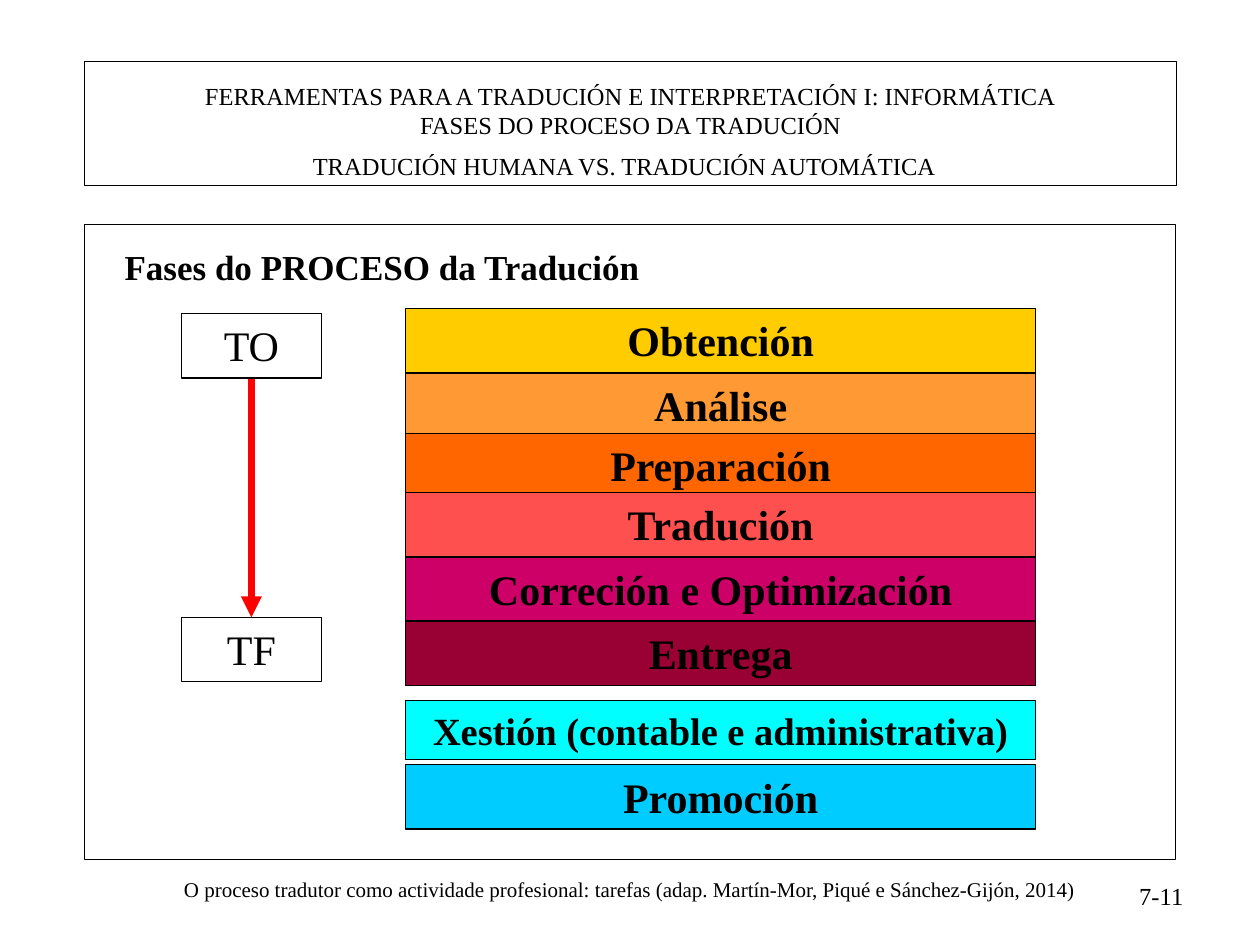
from dataclasses import dataclass

from lxml import etree
from pptx import Presentation
from pptx.dml.color import RGBColor
from pptx.enum.shapes import MSO_CONNECTOR, MSO_SHAPE
from pptx.enum.text import MSO_ANCHOR, PP_ALIGN
from pptx.oxml.ns import qn
from pptx.util import Inches, Pt

RECTANGLE = MSO_SHAPE.RECTANGLE
STRAIGHT = MSO_CONNECTOR.STRAIGHT
TOP = MSO_ANCHOR.TOP
LEFT, CENTER, RIGHT = PP_ALIGN.LEFT, PP_ALIGN.CENTER, PP_ALIGN.RIGHT


@dataclass(frozen=True)
class Theme:
    font: str = "Times New Roman"
    ink: str = "000000"
    paper: str = "FFFFFF"
    arrow: str = "FF0000"
    border: float = 0.75
    arrow_width: float = 4
    caption: int = 12
    header: int = 14
    heading: int = 20
    long_phase: int = 22
    phase: int = 24


THEME = Theme()

# Phase name, top in inches, fill
PHASES = [
    ("Obtención", 2.45, "FFCC00"),
    ("Análise", 2.96, "FF9933"),
    ("Preparación", 3.44, "FF6600"),
    ("Tradución", 3.91, "FF5050"),
    ("Correción e Optimización", 4.42, "CC0066"),
    ("Entrega", 4.93, "990033"),
    ("Promoción", 6.07, "00CCFF"),
]
PHASE_LEFT, PHASE_WIDTH, BOX_HEIGHT = 3.22, 5, 0.51
TEXT_LEFT, TEXT_WIDTH = 1.44, 1.11


def write_text(shape, text, *, size, bold=False, align=CENTER, inset_top=0.05):
    frame = shape.text_frame
    frame.word_wrap = True
    frame.vertical_anchor = TOP
    frame.margin_top = Inches(inset_top)
    paragraph = frame.paragraphs[0]
    paragraph.text = text
    paragraph.alignment = align
    for run in paragraph.runs:
        run.font.name = THEME.font
        run.font.size = Pt(size)
        run.font.bold = bold
        run.font.color.rgb = RGBColor.from_string(THEME.ink)


def add_box(slide, left, top, width, height, fill=None):
    box = slide.shapes.add_shape(
        RECTANGLE, Inches(left), Inches(top), Inches(width), Inches(height))
    box.shadow.inherit = False
    if fill:
        box.fill.solid()
        box.fill.fore_color.rgb = RGBColor.from_string(fill)
    else:
        box.fill.background()
    box.line.color.rgb = RGBColor.from_string(THEME.ink)
    box.line.width = Pt(THEME.border)
    return box


def add_label(slide, text, left, top, width, height, **text_format):
    label = slide.shapes.add_textbox(
        Inches(left), Inches(top), Inches(width), Inches(height))
    write_text(label, text, **text_format)


def add_arrow(slide, x, start, end):
    arrow = slide.shapes.add_connector(
        STRAIGHT, Inches(x), Inches(start), Inches(x), Inches(end))
    arrow.line.color.rgb = RGBColor.from_string(THEME.arrow)
    arrow.line.width = Pt(THEME.arrow_width)
    properties = arrow.element.spPr
    etree.SubElement(properties.find(qn("a:ln")), qn("a:tailEnd"), type="triangle")
    etree.SubElement(properties, qn("a:effectLst"))


def main():
    presentation = Presentation()
    presentation.slide_width, presentation.slide_height = Inches(10), Inches(7.5)
    slide = presentation.slides.add_slide(presentation.slide_layouts[6])

    # Course header and content frame
    header = add_box(slide, 0.67, 0.49, 8.67, 0.98)
    write_text(
        header,
        "FERRAMENTAS PARA A TRADUCIÓN E INTERPRETACIÓN I: INFORMÁTICA\v"
        "FASES DO PROCESO DA TRADUCIÓN",
        size=THEME.header, inset_top=0.15)
    add_label(slide, "TRADUCIÓN HUMANA VS. TRADUCIÓN AUTOMÁTICA",
              0.98, 1.15, 7.95, 0.34, size=THEME.header)
    add_box(slide, 0.67, 1.78, 8.66, 5.04)
    add_label(slide, "Fases do PROCESO da Tradución",
              0.89, 1.9, 8.22, 0.44, size=THEME.heading, bold=True, align=LEFT)

    # Phases of the process
    for name, top, fill in PHASES:
        phase = add_box(slide, PHASE_LEFT, top, PHASE_WIDTH, BOX_HEIGHT, fill)
        write_text(phase, name, size=THEME.phase, bold=True)
    management = add_box(slide, PHASE_LEFT, 5.56, PHASE_WIDTH, 0.47, "00FFFF")
    write_text(management, "Xestión (contable e administrativa)",
               size=THEME.long_phase, bold=True)

    # From source text to final text
    add_arrow(slide, TEXT_LEFT + TEXT_WIDTH / 2, 2.94, 4.9)
    for name, top in (("TO", 2.49), ("TF", 4.9)):
        stage = add_box(slide, TEXT_LEFT, top, TEXT_WIDTH, BOX_HEIGHT, THEME.paper)
        write_text(stage, name, size=THEME.phase)

    # Caption and page number
    add_label(
        slide,
        "O proceso tradutor como actividade profesional: tarefas "
        "(adap. Martín-Mor, Piqué e Sánchez-Gijón, 2014)",
        0.67, 6.91, 8.66, 0.3, size=THEME.caption)
    add_label(slide, "7-11", 6.42, 6.94, 3.07, 0.28,
              size=THEME.header, align=RIGHT)

    presentation.save("out.pptx")


if __name__ == "__main__":
    main()
